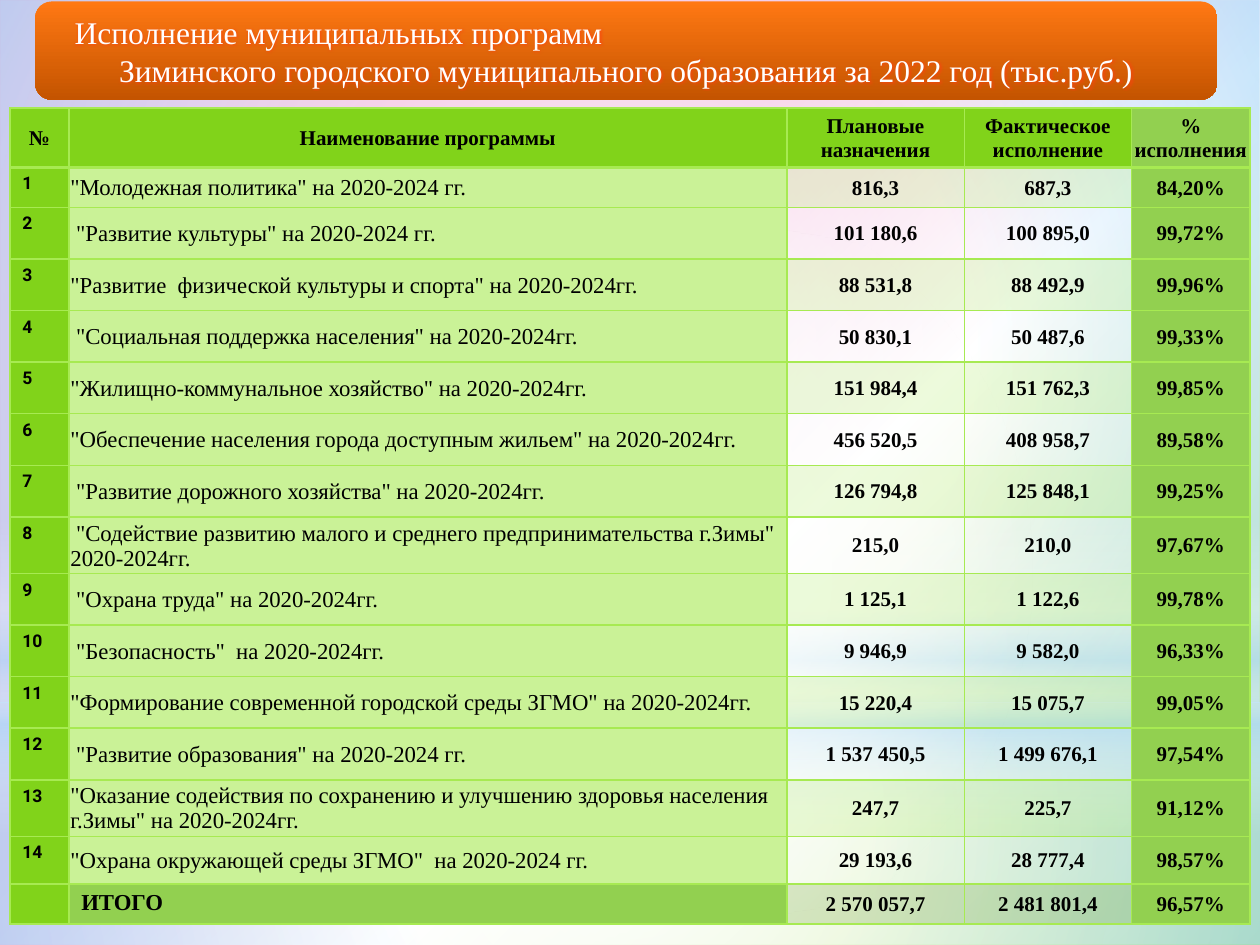
from lxml import etree
from pptx import Presentation
from pptx import util as u
from pptx.dml.color import RGBColor
from pptx.enum import shapes, text
from pptx.oxml import parse_xml
from pptx.oxml.ns import nsdecls, qn

COLORS = {
    "white": "FFFFFF", "black": "000000", "sky": "B4DCFA", "pink": "EA8AC8",
    "green": "81D31A", "olive": "92D050", "light": "CAF297", "lime": "A7EA52",
    "dark": "568D11", "orange": "FF7813", "rust": "C45400", "glow": "FF4010",
}
SERIF = "Times New Roman"
CENTER, LEFT = text.PP_ALIGN.CENTER, text.PP_ALIGN.LEFT


def write(p, value, size=12, font=SERIF, color="black", bold=False, align=LEFT):
    p.alignment = align
    r = p.add_run()
    r.text = value
    r.font.size = u.Pt(size)
    r.font.name = font
    r.font.bold = bold
    r.font.color.rgb = RGBColor.from_string(COLORS[color])
    return r


def gradient(fill, element, stops, angle=None):
    fill.solid()
    old = element.xpath(".//a:solidFill")[0]
    gs = "".join(
        f'<a:gs pos="{pos * 1000}"><a:srgbClr val="{COLORS[name]}">'
        f'<a:alpha val="{alpha * 1000}"/></a:srgbClr></a:gs>'
        for pos, name, alpha in stops)
    if angle is None:
        way = ('<a:path path="circle"><a:fillToRect l="50000" t="50000" '
               'r="50000" b="50000"/></a:path>')
    else:
        way = f'<a:lin ang="{angle * 60000}" scaled="0"/>'
    new = parse_xml(f'<a:gradFill {nsdecls("a")} rotWithShape="1">'
                    f'<a:gsLst>{gs}</a:gsLst>{way}</a:gradFill>')
    old.getparent().replace(old, new)


prs = Presentation()
prs.slide_width, prs.slide_height = u.Cm(25.4), u.Cm(19.05)
s = prs.slides.add_slide(prs.slide_layouts[6])

fill = s.background.fill
fill.solid()
gradient(fill, s._element.xpath("./p:cSld/p:bg")[0],
         [(0, "pink", 100), (39, "pink", 100), (60, "white", 100), (100, "green", 100)], 45)

RECT, OVAL = shapes.MSO_SHAPE.RECTANGLE, shapes.MSO_SHAPE.OVAL
layers = [
    (RECT, 14.17, 4.88, [(0, "white", 91), (37, "white", 76), (100, "sky", 79)], None),
    (RECT, 0, 14.17, [(0, "white", 89), (48, "white", 62), (100, "sky", 79)], None),
    (RECT, 10.46, 6.35, [(0, "white", 0), (29, "white", 30), (45, "sky", 40),
                         (55, "white", 26), (65, "sky", 60), (100, "white", 0)], 90),
    (OVAL, 4.45, 14.17, [(0, "white", 100), (56, "white", 0)], None),
]
for kind, top, height, stops, angle in layers:
    sp = s.shapes.add_shape(kind, 0, u.Cm(top), prs.slide_width, u.Cm(height))
    sp.shadow.inherit = False
    sp.line.fill.background()
    gradient(sp.fill, sp._element, stops, angle)

header = ["№", "Наименование программы", "Плановые назначения",
          "Фактическое исполнение", "% исполнения"]
programs = [
    ('"Молодежная политика" на 2020-2024 гг.', "816,3", "687,3", "84,20%"),
    (' "Развитие культуры" на 2020-2024 гг.', "101 180,6", "100 895,0", "99,72%"),
    ('"Развитие  физической культуры и спорта" на 2020-2024гг.', "88 531,8", "88 492,9", "99,96%"),
    (' "Социальная поддержка населения" на 2020-2024гг.', "50 830,1", "50 487,6", "99,33%"),
    ('"Жилищно-коммунальное хозяйство" на 2020-2024гг.', "151 984,4", "151 762,3", "99,85%"),
    ('"Обеспечение населения города доступным жильем" на 2020-2024гг.',
     "456 520,5", "408 958,7", "89,58%"),
    (' "Развитие дорожного хозяйства" на 2020-2024гг.', "126 794,8", "125 848,1", "99,25%"),
    (' "Содействие развитию малого и среднего предпринимательства г.Зимы" 2020-2024гг.',
     "215,0", "210,0", "97,67%"),
    (' "Охрана труда" на 2020-2024гг.', "1 125,1", "1 122,6", "99,78%"),
    (' "Безопасность"  на 2020-2024гг.', "9 946,9", "9 582,0", "96,33%"),
    ('"Формирование современной городской среды ЗГМО" на 2020-2024гг.',
     "15 220,4", "15 075,7", "99,05%"),
    (' "Развитие образования" на 2020-2024 гг.', "1 537 450,5", "1 499 676,1", "97,54%"),
    ('"Оказание содействия по сохранению и улучшению здоровья населения г.Зимы" на 2020-2024гг.',
     "247,7", "225,7", "91,12%"),
    ('"Охрана окружающей среды ЗГМО"  на 2020-2024 гг.', "29 193,6", "28 777,4", "98,57%"),
]
total = ["", "ИТОГО", "2 570 057,7", "2 481 801,4", "96,57%"]
rows = [header, *([str(n), *row] for n, row in enumerate(programs, 1)), total]
last = len(rows) - 1
widths = [1.19, 14.47, 3.58, 3.37, 2.39]
heights = {0: 1.19, 1: 0.81, 8: 1.14, 13: 1.14, 14: 0.96, last: 0.81}

tbl = s.shapes.add_table(len(rows), len(widths), u.Cm(0.2), u.Cm(2.18),
                         u.Cm(sum(widths)), u.Cm(16.48)).table
tbl.first_row = tbl.horz_banding = False
for col, width in zip(tbl.columns, widths):
    col.width = u.Cm(width)

for i, row in enumerate(rows):
    tbl.rows[i].height = u.Cm(heights.get(i, 1.04))
    for j, value in enumerate(row):
        cell = tbl.cell(i, j)
        padded = value and ((j == 0 and i > 0) or (i == last and j == 1))
        cell.margin_left = cell.margin_right = u.Cm(0.25 if padded else 0.03)
        cell.margin_top = u.Cm(0.13 if padded else 0.03)
        cell.margin_bottom = u.Cm(0.13 if padded else 0)
        cell.vertical_anchor = text.MSO_ANCHOR.TOP if padded else text.MSO_ANCHOR.MIDDLE

        p = cell.text_frame.paragraphs[0]
        if i > 0 and j == 0:
            if value:
                write(p, value, size=10, font="Roboto", bold=True)
        elif i > 0 and j == 1:
            write(p, value, size=13, bold=i == last)
        else:
            write(p, value, bold=True, align=CENTER)

        tint = None
        if j == 4 or (i == last and j == 1):
            color = "olive"
        elif i == 0 or j == 0:
            color = "green"
        elif j == 1:
            color = "light"
        else:
            tint = 20
            color = "dark" if i == last else "lime" if i % 2 else None
        if color:
            cell.fill.solid()
            cell.fill.fore_color.rgb = RGBColor.from_string(COLORS[color])
        else:
            cell.fill.background()
        tcPr = cell._tc.get_or_add_tcPr()
        if color and tint:
            clr = tcPr.find(".//" + qn("a:srgbClr"))
            etree.SubElement(clr, qn("a:alpha")).set("val", str(tint * 1000))
        for k, side in enumerate("LRTB"):
            thick = (i == 0 and side == "B") or (i == 1 and side == "T")
            tcPr.insert(k, parse_xml(
                f'<a:ln{side} {nsdecls("a")} w="{u.Pt(2 if thick else 1)}"><a:solidFill>'
                f'<a:srgbClr val="{COLORS["lime"]}"/></a:solidFill></a:ln{side}>'))

sp = s.shapes.add_shape(shapes.MSO_SHAPE.ROUNDED_RECTANGLE,
                        u.Cm(0.71), u.Cm(0.03), u.Cm(23.83), u.Cm(1.98))
sp.shadow.inherit = False
sp.line.fill.background()
gradient(sp.fill, sp._element, [(0, "orange", 100), (100, "rust", 100)], 90)
tf = sp.text_frame
tf.word_wrap = True
tf.vertical_anchor = text.MSO_ANCHOR.MIDDLE
title = [("Исполнение муниципальных программ", LEFT),
         ("Зиминского городского муниципального образования за 2022 год (тыс.руб.)", CENTER)]
for n, (value, align) in enumerate(title):
    p = tf.add_paragraph() if n else tf.paragraphs[0]
    r = write(p, value, size=18, color="white", align=align)
    r._r.rPr.find(qn("a:solidFill")).addnext(parse_xml(
        f'<a:effectLst {nsdecls("a")}><a:glow rad="{u.Pt(4)}">'
        f'<a:srgbClr val="{COLORS["glow"]}"><a:alpha val="60000"/></a:srgbClr>'
        f'</a:glow></a:effectLst>'))
tf.paragraphs[0]._p.get_or_add_pPr().set("marL", str(u.Cm(0.45)))

prs.save("out.pptx")
